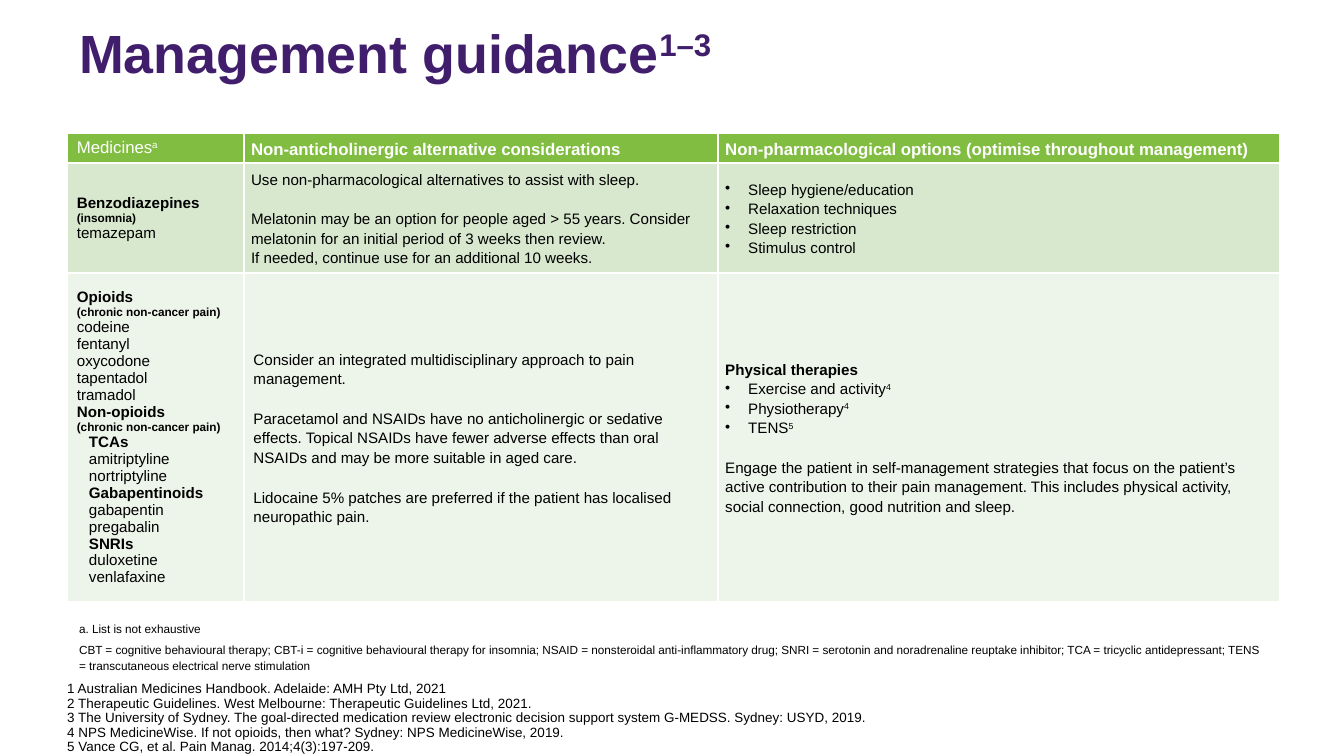
from lxml import etree
from pptx import Presentation
from pptx.dml.color import RGBColor
from pptx.enum.text import MSO_ANCHOR
from pptx.oxml.ns import qn
from pptx.util import Inches, Pt

TOP, MIDDLE, BOTTOM = MSO_ANCHOR.TOP, MSO_ANCHOR.MIDDLE, MSO_ANCHOR.BOTTOM
WIDTH, HEIGHT = 11.11, 6.25
LEFT = 0.05 * WIDTH
COLORS = {"title": "401E6C", "header": "81BD41", "dark band": "D8E8CF",
          "light band": "EDF4E9", "white": "FFFFFF", "black": "000000"}

# Each style: size, bold, colour, line spacing, space before, left indent, bullet
STYLES = {
    "title": (32, True, "title", 0.9, 0, 0, False),
    "first header": (10, False, "white", 1, 0, 0, False),
    "header": (10, True, "white", 1.15, 0, 0, False),
    "group": (9, True, "black", 1, 0, 0, False),
    "use": (7, True, "black", 1, 0, 0, False),
    "medicine": (9, False, "black", 1, 0, 0, False),
    "subgroup": (9, True, "black", 1, 0, 0.1, False),
    "submedicine": (9, False, "black", 1, 0, 0.1, False),
    "advice": (9, False, "black", 1.15, 12, 0, False),
    "advice line": (9, False, "black", 1.15, 0, 0, False),
    "advice heading": (9, True, "black", 1.15, 0, 0, False),
    "bullet": (9, False, "black", 1.15, 0, 0.19, True),
    "note": (7, False, "black", 1.15, 3, 0, False),
    "reference": (8, False, "black", 0.9, 0, 0, False),
}


def write(frame, paragraphs):
    """Write (style, text) pairs; text between ^ marks is superscript."""
    for index, (style, text) in enumerate(paragraphs):
        size, bold, color, spacing, before, indent, bullet = STYLES[style]
        paragraph = frame.paragraphs[0] if index == 0 else frame.add_paragraph()
        properties = paragraph._p.get_or_add_pPr()
        properties.set("marL", str(Inches(indent)))
        properties.set("indent", str(-Inches(indent) if bullet else 0))
        if bullet:
            etree.SubElement(properties, qn("a:buChar"), char="•")
        paragraph.line_spacing = spacing
        paragraph.space_before = Pt(before if index else 0)
        for part, piece in enumerate(text.split("^")):
            if not piece:
                continue
            run = paragraph.add_run()
            run.text = piece
            formats = {"name": "Arial", "size": Pt(size), "bold": bold}
            for name, value in formats.items():
                setattr(run.font, name, value)
            run.font.color.rgb = RGBColor.from_string(COLORS[color])
            if part % 2:
                run._r.get_or_add_rPr().set("baseline", "30000")


presentation = Presentation()
presentation.slide_width = Inches(WIDTH)
presentation.slide_height = Inches(HEIGHT)
slide = presentation.slides.add_slide(presentation.slide_layouts[6])

# Title, notes and references: left, top, width, height, anchor, insets, paragraphs
references = [
    "1 Australian Medicines Handbook. Adelaide: AMH Pty Ltd, 2021",
    "2 Therapeutic Guidelines. West Melbourne: Therapeutic Guidelines Ltd, 2021.",
    "3 The University of Sydney. The goal-directed medication review electronic "
    "decision support system G-MEDSS. Sydney: USYD, 2019.",
    "4 NPS MedicineWise. If not opioids, then what? Sydney: NPS MedicineWise, 2019.",
    "5 Vance CG, et al. Pain Manag. 2014;4(3):197-209.",
]
notes = [
    "a. List is not exhaustive",
    "CBT = cognitive behavioural therapy; CBT-i = cognitive behavioural therapy for "
    "insomnia; NSAID = nonsteroidal anti-inflammatory drug; SNRI = serotonin and "
    "noradrenaline reuptake inhibitor; TCA = tricyclic antidepressant; TENS = "
    "transcutaneous electrical nerve stimulation",
]
text_boxes = [
    (0.17, 8.82, 0.99, TOP, (0.1, 0.05), [("title", "Management guidance^1–3^")]),
    (5.07, 10.02, 0.54, TOP, (0.1, 0.05), [("note", text) for text in notes]),
    (5.76, 7.97, 0.48, BOTTOM, (0, 0), [("reference", text) for text in references]),
]
for top, width, height, anchor, (side, edge), paragraphs in text_boxes:
    box = slide.shapes.add_textbox(Inches(LEFT), Inches(top), Inches(width), Inches(height))
    frame_formats = {"word_wrap": True, "vertical_anchor": anchor,
                     "margin_left": Inches(side), "margin_right": Inches(side),
                     "margin_top": Inches(edge), "margin_bottom": Inches(edge)}
    for name, value in frame_formats.items():
        setattr(box.text_frame, name, value)
    write(box.text_frame, paragraphs)

# Table content, row by row
header_row = [
    [("first header", "Medicines^a^")],
    [("header", "Non-anticholinergic alternative considerations")],
    [("header", "Non-pharmacological options (optimise throughout management)")],
]
sleep_row = [
    [("group", "Benzodiazepines"), ("use", "(insomnia)"), ("medicine", "temazepam")],
    [("advice", "Use non-pharmacological alternatives to assist with sleep."),
     ("advice", "Melatonin may be an option for people aged > 55 years. Consider "
                "melatonin for an initial period of 3 weeks then review."),
     ("advice line", "If needed, continue use for an additional 10 weeks.")],
    [("bullet", text) for text in ("Sleep hygiene/education", "Relaxation techniques",
                                   "Sleep restriction", "Stimulus control")],
]
pain_medicines = [("group", "Opioids"), ("use", "(chronic non-cancer pain)")]
for name in ("codeine", "fentanyl", "oxycodone", "tapentadol", "tramadol"):
    pain_medicines.append(("medicine", name))
pain_medicines += [("group", "Non-opioids"), ("use", "(chronic non-cancer pain)")]
non_opioids = {"TCAs": ("amitriptyline", "nortriptyline"),
               "Gabapentinoids": ("gabapentin", "pregabalin"),
               "SNRIs": ("duloxetine", "venlafaxine")}
for subgroup, names in non_opioids.items():
    pain_medicines.append(("subgroup", subgroup))
    pain_medicines += [("submedicine", name) for name in names]
pain_row = [
    pain_medicines,
    [("advice", "Consider an integrated multidisciplinary approach to pain management."),
     ("advice", "Paracetamol and NSAIDs have no anticholinergic or sedative effects. "
                "Topical NSAIDs have fewer adverse effects than oral NSAIDs and may be "
                "more suitable in aged care."),
     ("advice", "Lidocaine 5% patches are preferred if the patient has localised "
                "neuropathic pain.")],
    [("advice heading", "Physical therapies"),
     ("bullet", "Exercise and activity^4^"),
     ("bullet", "Physiotherapy^4^"),
     ("bullet", "TENS^5^"),
     ("advice", "Engage the patient in self-management strategies that focus on the "
                "patient’s active contribution to their pain management. This includes "
                "physical activity, social connection, good nutrition and sleep.")],
]

# Table grid
column_widths = [1.46, 3.92, 4.64]
row_heights = [0.23, 0.91, 2.54]
rows = [("header", header_row), ("dark band", sleep_row), ("light band", pain_row)]
table = slide.shapes.add_table(
    len(rows), len(column_widths), Inches(LEFT), Inches(1.1),
    Inches(sum(column_widths)), Inches(sum(row_heights))).table
table.first_row = False
table.horz_banding = False
for column, width in zip(table.columns, column_widths):
    column.width = Inches(width)
for row, height in zip(table.rows, row_heights):
    row.height = Inches(height)

# Table cells with white borders
for row_index, (band, contents) in enumerate(rows):
    for column_index, paragraphs in enumerate(contents):
        cell = table.cell(row_index, column_index)
        roomy = column_index == 0 or (row_index, column_index) == (2, 1)
        side, edge = (0.08, 0.04) if roomy else (0.06, 0)
        cell_formats = {"vertical_anchor": MIDDLE,
                        "margin_left": Inches(side), "margin_right": Inches(side),
                        "margin_top": Inches(edge), "margin_bottom": Inches(edge)}
        for name, value in cell_formats.items():
            setattr(cell, name, value)
        cell_properties = cell._tc.get_or_add_tcPr()
        for border in ("a:lnL", "a:lnR", "a:lnT", "a:lnB"):
            line = etree.SubElement(cell_properties, qn(border), w=str(Pt(1)))
            line_fill = etree.SubElement(line, qn("a:solidFill"))
            etree.SubElement(line_fill, qn("a:srgbClr"), val=COLORS["white"])
        cell.fill.solid()
        cell.fill.fore_color.rgb = RGBColor.from_string(COLORS[band])
        write(cell.text_frame, paragraphs)

presentation.save("out.pptx")
